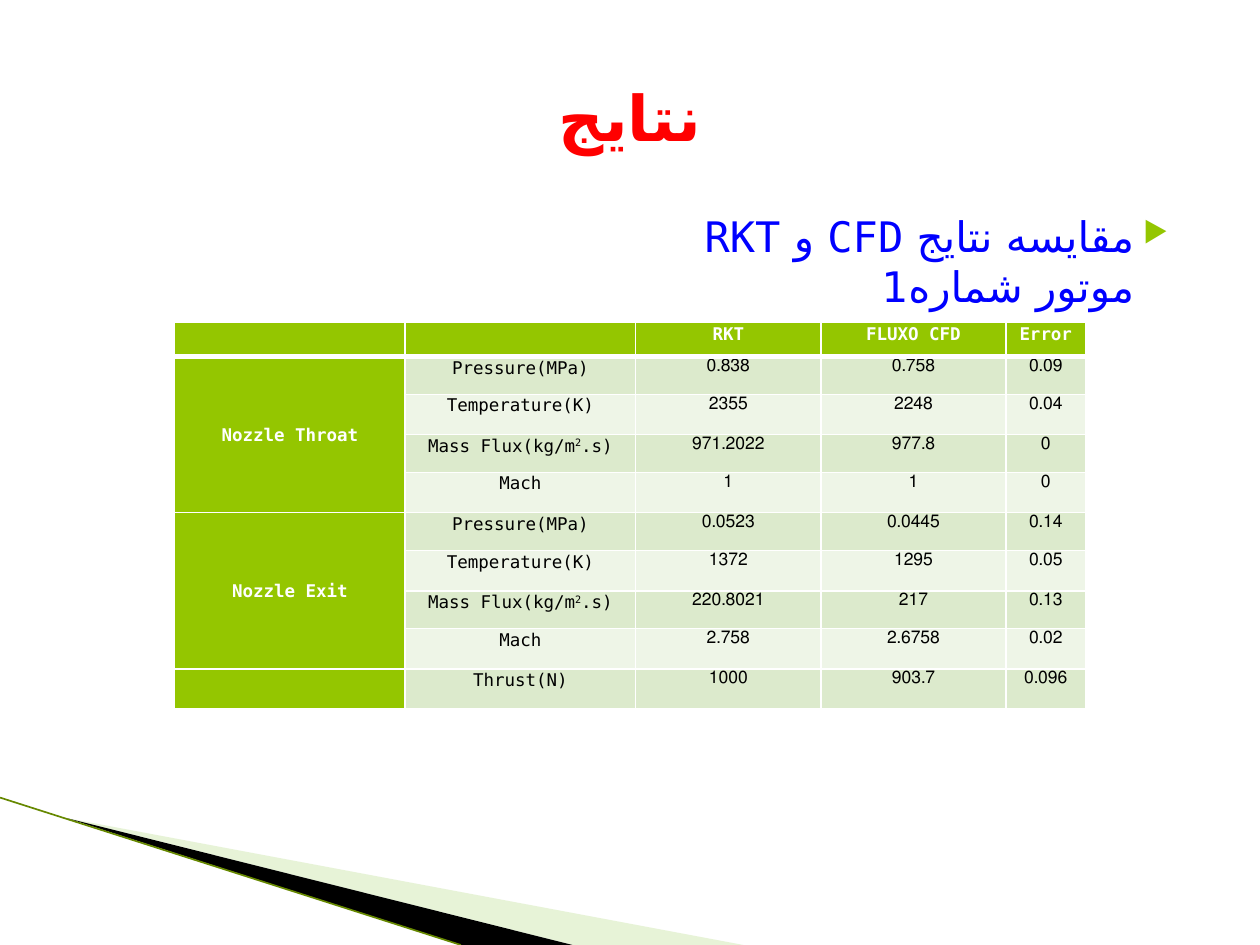
from collections import namedtuple
from dataclasses import dataclass

from lxml import etree
from pptx import Presentation
from pptx.dml.color import RGBColor
from pptx.enum.shapes import MSO_CONNECTOR
from pptx.enum.text import MSO_ANCHOR, PP_ALIGN
from pptx.oxml.ns import qn
from pptx.util import Inches, Pt

CENTER, RIGHT = PP_ALIGN.CENTER, PP_ALIGN.RIGHT
TOP, MIDDLE = MSO_ANCHOR.TOP, MSO_ANCHOR.MIDDLE
STRAIGHT = MSO_CONNECTOR.STRAIGHT
WIDE, HIGH = 10, 7.5

Box = namedtuple("Box", "x y w h")


@dataclass(frozen=True)
class Theme:
    face: str = "DejaVu Sans Mono"
    script: str = "DejaVu Sans"
    title: str = "FF0000"
    lead: str = "0000FF"
    green: str = "94C600"
    pale: str = "C3E19D"
    olive: str = "668800"
    bands: tuple = ("DCEACC", "EEF5E7")
    dark: str = "000000"
    white: str = "FFFFFF"
    big: int = 36
    mid: int = 24
    small: int = 10


T = Theme()

# Table content: each group holds its label and rows
HEAD = ["", "", "RKT", "FLUXO CFD", "Error"]
GROUPS = [
    ("Nozzle Throat", [
        ("Pressure(MPa)", "0.838", "0.758", "0.09"),
        ("Temperature(K)", "2355", "2248", "0.04"),
        ("Mass Flux(kg/m^2^.s)", "971.2022", "977.8", "0"),
        ("Mach", "1", "1", "0")]),
    ("Nozzle Exit", [
        ("Pressure(MPa)", "0.0523", "0.0445", "0.14"),
        ("Temperature(K)", "1372", "1295", "0.05"),
        ("Mass Flux(kg/m^2^.s)", "220.8021", "217", "0.13"),
        ("Mach", "2.758", "2.6758", "0.02")]),
    ("", [("Thrust(N)", "1000", "903.7", "0.096")]),
]
COLS = [1.83, 1.83, 1.47, 1.47, 0.63]
ROWS = [0.27] + [0.3, 0.32] * 4 + [0.32]


def add(parent, tag, **attrs):
    return etree.SubElement(parent, qn(tag), attrs)


def style(para, size, color, bold=False):
    font = para.font
    font.name, font.size, font.bold = T.face, Pt(size), bold
    font.color.rgb = RGBColor.from_string(color)


def paint(fill, color):
    fill.solid()
    fill.fore_color.rgb = RGBColor.from_string(color)


# One Persian paragraph, with a face for its script
def text_box(slide, box, text, anchor, align):
    frame = slide.shapes.add_textbox(*map(Inches, box)).text_frame
    frame.word_wrap = True
    frame.vertical_anchor = anchor
    para = frame.paragraphs[0]
    para.text = text
    para.alignment = align
    for run in para.runs:
        add(run._r.get_or_add_rPr(), "a:cs", typeface=T.script)
    return para


# Corner swoosh, points as shares of its box
def draw_swoosh(slide, box):
    def spot(x, y):
        return Inches(box.x + x * box.w), Inches(box.y + y * box.h)

    def wedge(color, start, *rest):
        path = slide.shapes.build_freeform(*spot(*start), scale=1.0)
        path.add_line_segments([spot(*p) for p in rest])
        shape = path.convert_to_shape()
        shape.shadow.inherit = False
        paint(shape.fill, color)
        shape.line.fill.background()
        return shape

    light = wedge(T.pale, (0.09, 0.14), (1, 1), (0.77, 1))
    tint = light.fill._xPr.find(qn("a:solidFill"))[0]
    add(tint, "a:alpha", val="40000")
    wedge(T.dark, (0.09, 0.14), (0.77, 1), (0.62, 1))

    edge = slide.shapes.add_connector(STRAIGHT, *spot(0, 0), *spot(0.62, 1))
    edge.line.color.rgb = RGBColor.from_string(T.olive)
    edge.line.width = Pt(0.95)
    add(edge._element.spPr, "a:effectLst")


def draw_lead(slide, box):
    text = "مقایسه نتایج CFD و RKT\vموتور شماره1"
    para = text_box(slide, box, text, TOP, RIGHT)
    props = para._p.get_or_add_pPr()
    for key, val in (("rtl", "1"), ("marL", str(Inches(0.4))),
                     ("indent", str(Inches(-0.28)))):
        props.set(key, val)
    add(add(props, "a:buClr"), "a:srgbClr", val=T.green)
    add(props, "a:buSzPct", val="68000")
    add(props, "a:buChar", char="▶")
    style(para, T.mid, T.lead)


def draw_title(slide, box):
    para = text_box(slide, box, "نتایج", MIDDLE, CENTER)
    style(para, T.big, T.title, True)


def set_cell(cell, text, fill, row, label=False):
    cell.margin_left = cell.margin_right = Inches(0.07)
    cell.margin_top = cell.margin_bottom = 0
    cell.vertical_anchor = MIDDLE if label else TOP
    # White rules, heavier under the header
    heavy = {0: "a:lnB", 1: "a:lnT"}.get(row)
    props = cell._tc.get_or_add_tcPr()
    for tag in ("a:lnL", "a:lnR", "a:lnT", "a:lnB"):
        rule = add(props, tag, w=str(Pt(3 if tag == heavy else 1)))
        add(add(rule, "a:solidFill"), "a:srgbClr", val=T.white)
    paint(cell.fill, fill)
    # Text, with superscripts between carets
    para = cell.text_frame.paragraphs[0]
    para.alignment = CENTER
    para.line_spacing = 1.07
    if not label:
        para.space_after = Pt(8)
        para._p.get_or_add_pPr().set("rtl", "1")
    strong = fill == T.green
    style(para, T.small, T.white if strong else T.dark, strong)
    for i, part in enumerate(text.split("^") if text else []):
        run = para.add_run()
        run.text = part
        if i % 2:
            run._r.get_or_add_rPr().set("baseline", "30000")


def draw_table(slide, box):
    table = slide.shapes.add_table(
        len(ROWS), len(COLS), *map(Inches, box)).table
    table.first_row = table.horz_banding = False
    for col, width in zip(table.columns, COLS):
        col.width = Inches(width)
    for row, height in zip(table.rows, ROWS):
        row.height = Inches(height)
    for c, text in enumerate(HEAD):
        set_cell(table.cell(0, c), text, T.green, 0)
    r = 1
    for name, rows in GROUPS:
        first = r
        for i, vals in enumerate(rows):
            label = name if i == 0 else ""
            set_cell(table.cell(r, 0), label, T.green, r, True)
            for c, text in enumerate(vals, 1):
                set_cell(table.cell(r, c), text, T.bands[i % 2], r)
            r += 1
        if len(rows) > 1:
            table.cell(first, 0).merge(table.cell(r - 1, 0))


def main():
    deck = Presentation()
    deck.slide_width, deck.slide_height = Inches(WIDE), Inches(HIGH)
    slide = deck.slides.add_slide(deck.slide_layouts[6])
    side = 0.05 * WIDE
    draw_swoosh(slide, Box(0, 6.33, 5.9, HIGH - 6.33))
    draw_lead(slide, Box(side, 1.62, WIDE - 2 * side, 4.95))
    draw_title(slide, Box(side, 0.04 * HIGH, WIDE - 2 * side, HIGH / 6))
    draw_table(slide, Box((WIDE - sum(COLS)) / 2, 2.56, sum(COLS), sum(ROWS)))
    deck.save("out.pptx")


if __name__ == "__main__":
    main()
